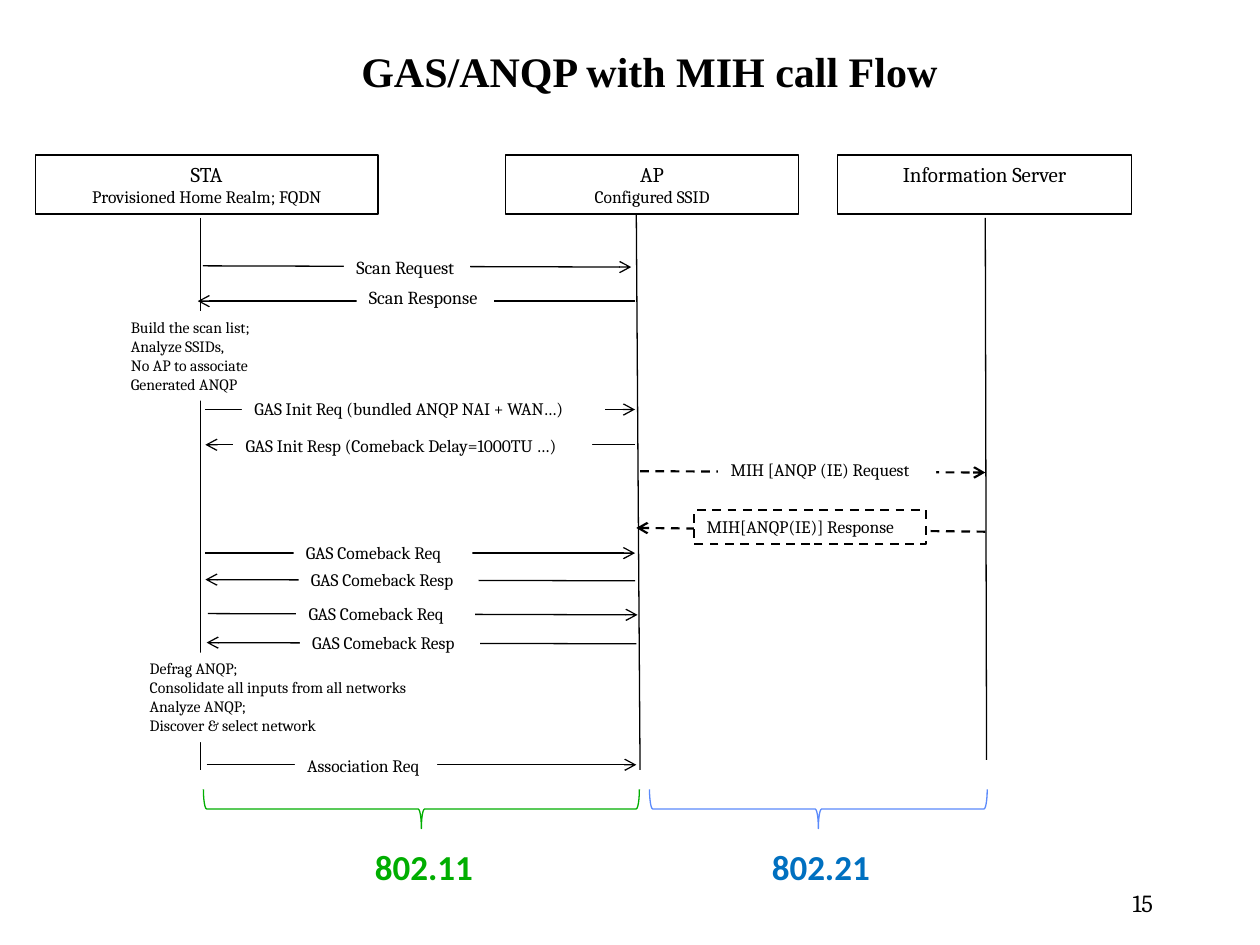
from dataclasses import dataclass

import pptx
import pptx.dml.color
import pptx.enum.dml
import pptx.enum.shapes
import pptx.enum.text
import pptx.oxml.ns
import pptx.util
from lxml import etree
from pptx.util import Inches

RGB = pptx.dml.color.RGBColor.from_string
ALIGN = pptx.enum.text.PP_ALIGN
ANCHOR = pptx.enum.text.MSO_ANCHOR
FIT = pptx.enum.text.MSO_AUTO_SIZE
SHAPES = pptx.enum.shapes.MSO_SHAPE
DASH = pptx.enum.dml.MSO_LINE.DASH


@dataclass(frozen=True)
class Theme:
    ink: str = "000000"
    paper: str = "FFFFFF"
    green: str = "00AE00"
    blue: str = "0070C0"
    light_blue: str = "5B8AFB"
    title_font: str = "Times New Roman"
    body_font: str = "Cambria"
    domain_font: str = "Calibri"
    title_size: float = 24
    domain_size: float = 20
    number_size: float = 14
    header_size: float = 12
    scan_size: float = 10.5
    label_size: float = 10
    note_size: float = 9
    thin: float = 0.75
    thick: float = 1.25


THEME = Theme()

# Role, detail, left, width
HEADERS = [
    ("STA", "Provisioned Home Realm; FQDN", 0.28, 2.72),
    ("AP", "Configured SSID", 4.01, 2.33),
    ("Information Server", None, 6.65, 2.33),
]

# Start and end of each lifeline
LIFELINES = [
    (1.59, 1.73, 1.59, 6.11),
    (5.05, 1.7, 5.08, 6.11),
    (7.82, 1.73, 7.83, 6.03),
]

# Text, label left, top, width, arrow from and to
SCANS = [
    ("Scan Request", 2.73, 1.98, 1, (1.61, 2.11, 5.01, 2.12)),
    ("Scan Response", 2.83, 2.22, 1.09, (5.04, 2.39, 1.57, 2.39)),
]
GAS_MESSAGES = [
    ("GAS Init Req (bundled ANQP NAI + WAN…)", 1.92, 3.11, 2.88, (1.63, 3.25, 5.04, 3.25)),
    ("GAS Init Resp (Comeback Delay=1000TU …)", 1.85, 3.4, 2.85, (5.04, 3.53, 1.63, 3.53)),
    ("GAS Comeback Req", 2.33, 4.25, 1.42, (1.63, 4.39, 5.04, 4.39)),
    ("GAS Comeback Resp", 2.37, 4.47, 1.43, (5.04, 4.61, 1.63, 4.6)),
    ("GAS Comeback Req", 2.35, 4.74, 1.42, (1.65, 4.87, 5.06, 4.88)),
    ("GAS Comeback Resp", 2.38, 4.97, 1.43, (5.05, 5.11, 1.64, 5.1)),
    ("Association Req", 2.34, 5.94, 1.13, (1.64, 6.07, 5.05, 6.07)),
]
MIH_REQUEST = ("MIH [ANQP (IE) Request", 5.7, 3.59, 1.73, (5.08, 3.74, 7.82, 3.75))
MIH_RESPONSE = ("MIH[ANQP(IE)] Response", 5.51, 4.05, 1.84, (7.82, 4.22, 5.05, 4.19))

# Lines, left, top, width
NOTES = [
    (["Build the scan list;", "Analyze SSIDs,", "No AP to associate", "Generated ANQP"],
     0.94, 2.47, 1.18),
    (["Defrag ANQP;", "Consolidate all inputs from all networks", "Analyze ANQP;",
      "Discover & select network"], 1.09, 5.18, 2.23),
]

# Text, left, text colour, brace centre, brace span, brace colour
DOMAINS = [
    ("802.11", 2.87, THEME.green, 3.345, 3.46, THEME.green),
    ("802.21", 6.02, THEME.blue, 6.495, 2.68, THEME.light_blue),
]


def style_line(line, color=THEME.ink, weight=THEME.thin, dashed=False):
    line.color.rgb = RGB(color)
    line.width = pptx.util.Pt(weight)
    if dashed:
        line.dash_style = DASH


def write(frame, lines, sizes, font=THEME.body_font, color=THEME.ink,
          align=ALIGN.LEFT, bold=False):
    for index, (text, size) in enumerate(zip(lines, sizes)):
        para = frame.add_paragraph() if index else frame.paragraphs[0]
        para.text = text
        para.alignment = align
        para.font.name = font
        para.font.size = pptx.util.Pt(size)
        para.font.bold = bold
        para.font.color.rgb = RGB(color)


def add_title(page, text):
    title = page.shapes.title
    title.left, title.top = Inches(1.46), Inches(0.17)
    title.width, title.height = Inches(7.39), Inches(0.83)
    title.text_frame.vertical_anchor = ANCHOR.MIDDLE
    write(title.text_frame, [text], [THEME.title_size], THEME.title_font,
          align=ALIGN.CENTER, bold=True)
    title.text_frame.paragraphs[0].line_spacing = 0.9


def add_line(page, points, arrow=False, **style):
    line = page.shapes.add_connector(
        pptx.enum.shapes.MSO_CONNECTOR.STRAIGHT, *map(Inches, points))
    style_line(line.line, **style)
    properties = line._element.spPr
    if arrow:
        outline = properties.find(pptx.oxml.ns.qn("a:ln"))
        etree.SubElement(outline, pptx.oxml.ns.qn("a:tailEnd"), type="arrow")
    etree.SubElement(properties, pptx.oxml.ns.qn("a:effectLst"))


def add_box(page, left, top, width, height, kind=SHAPES.RECTANGLE):
    box = page.shapes.add_shape(kind, *map(Inches, (left, top, width, height)))
    box.shadow.inherit = False
    box.fill.background()
    box.line.fill.background()
    box.text_frame.vertical_anchor = ANCHOR.TOP
    return box


def add_header(page, role, detail, left, width):
    box = add_box(page, left, 1.23, width, 0.47)
    style_line(box.line)
    lines = [role, detail] if detail else [role]
    write(box.text_frame, lines, [THEME.header_size, THEME.label_size], align=ALIGN.CENTER)


def add_label(page, lines, left, top, width, height, size):
    box = add_box(page, left, top, width, height)
    box.fill.solid()
    box.fill.fore_color.rgb = RGB(THEME.paper)
    box.text_frame.word_wrap = False
    box.text_frame.auto_size = FIT.SHAPE_TO_FIT_TEXT
    write(box.text_frame, lines, [size] * len(lines))
    return box


def add_message(page, text, left, top, width, points, size=THEME.label_size,
                height=0.27, **style):
    add_line(page, points, arrow=True, **style)
    return add_label(page, [text], left, top, width, height, size)


def add_text(page, text, left, top, width, height, size, wrap=True, **style):
    box = page.shapes.add_textbox(*map(Inches, (left, top, width, height)))
    box.text_frame.word_wrap = wrap
    write(box.text_frame, [text], [size], **style)


def add_domain(page, text, left, text_color, center, span, brace_color):
    # The brace is upright before it is turned, so its height is the span
    thickness, middle = 0.31, 6.42
    brace = add_box(page, center - thickness / 2, middle - span / 2, thickness, span,
                    SHAPES.LEFT_BRACE)
    brace.rotation = 270
    style_line(brace.line, brace_color)
    add_text(page, text, left, 6.66, 0.99, 0.44, THEME.domain_size, wrap=False,
             font=THEME.domain_font, color=text_color, align=ALIGN.CENTER, bold=True)


def main():
    deck = pptx.Presentation()
    deck.slide_width, deck.slide_height = Inches(10), Inches(7.5)
    page = deck.slides.add_slide(deck.slide_layouts[5])
    add_title(page, "GAS/ANQP with MIH call Flow")

    # Participants
    for points in LIFELINES:
        add_line(page, points)
    for header in HEADERS:
        add_header(page, *header)

    # Messages and processing notes
    for scan in SCANS:
        add_message(page, *scan, size=THEME.scan_size, height=0.28)
    for message in GAS_MESSAGES:
        add_message(page, *message)
    dashes = {"weight": THEME.thick, "dashed": True}
    add_message(page, *MIH_REQUEST, **dashes)
    response = add_message(page, *MIH_RESPONSE, **dashes)
    style_line(response.line, **dashes)
    response.text_frame.word_wrap = True
    for lines, left, top, width in NOTES:
        add_label(page, lines, left, top, width, 0.71, THEME.note_size)

    # Protocol domains and page number
    for domain in DOMAINS:
        add_domain(page, *domain)
    add_text(page, "15", 8.5, 7, 0.75, 0.42, THEME.number_size, align=ALIGN.RIGHT)

    deck.save("out.pptx")


if __name__ == "__main__":
    main()
